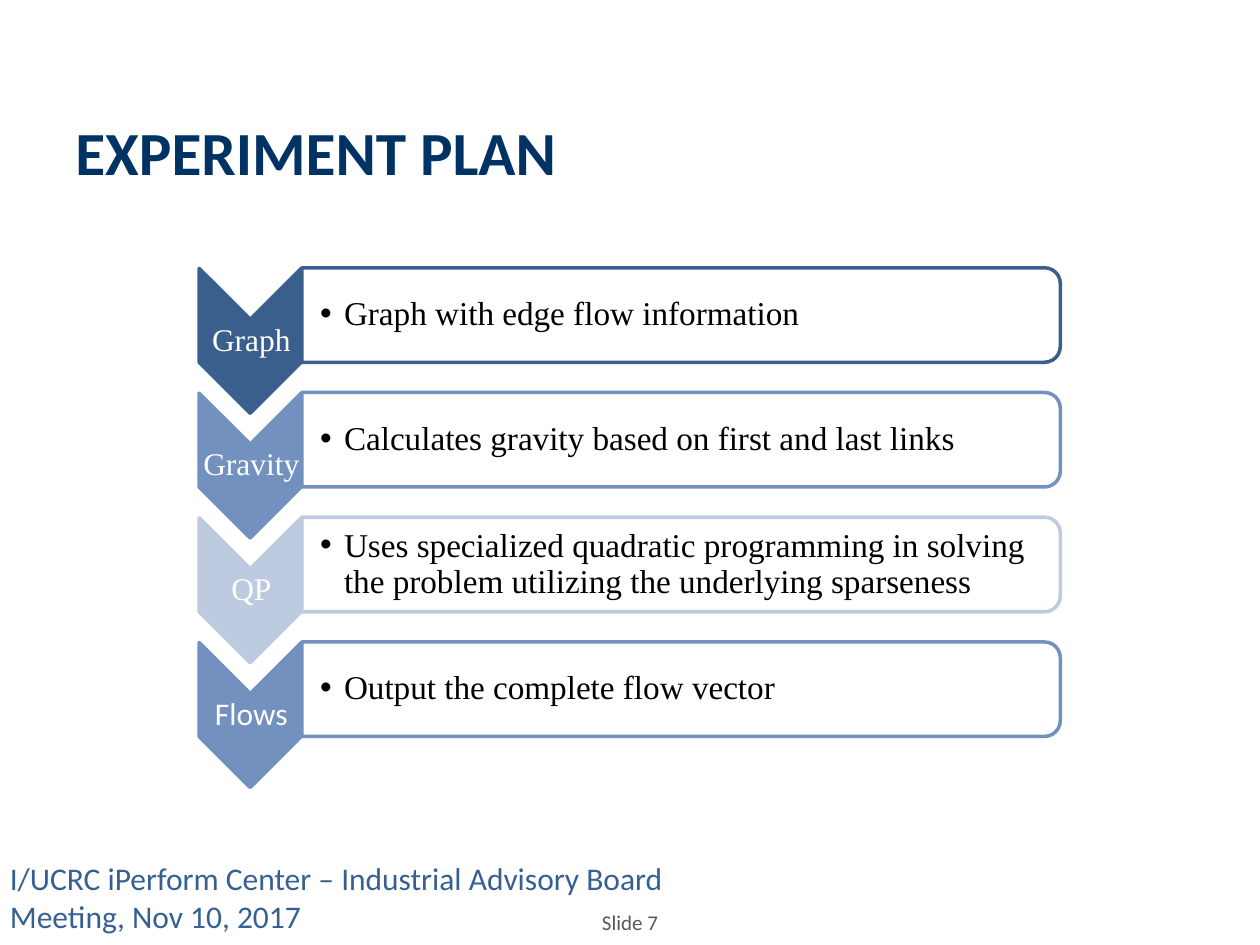
from dataclasses import dataclass

from lxml import etree
from pptx import Presentation
from pptx.dml.color import RGBColor
from pptx.enum.shapes import MSO_SHAPE
from pptx.enum.text import MSO_ANCHOR, MSO_AUTO_SIZE, PP_ALIGN
from pptx.oxml.ns import qn
from pptx.util import Inches, Pt

CHEVRON = MSO_SHAPE.CHEVRON
ROUNDED_TOP = MSO_SHAPE.ROUND_2_SAME_RECTANGLE
TOP, MIDDLE, BOTTOM = MSO_ANCHOR.TOP, MSO_ANCHOR.MIDDLE, MSO_ANCHOR.BOTTOM
LEFT, CENTER = PP_ALIGN.LEFT, PP_ALIGN.CENTER
GROW = MSO_AUTO_SIZE.SHAPE_TO_FIT_TEXT

NAVY = RGBColor(0x00, 0x32, 0x63)
FOOTER_BLUE = RGBColor(0x37, 0x60, 0x92)
DARK_BLUE = RGBColor(0x3A, 0x5F, 0x8C)
MID_BLUE = RGBColor(0x73, 0x91, 0xBF)
PALE_BLUE = RGBColor(0xBE, 0xCA, 0xDF)
GRAY = RGBColor(0x59, 0x59, 0x59)
WHITE = RGBColor(0xFF, 0xFF, 0xFF)
BLACK = RGBColor(0x00, 0x00, 0x00)

SANS, SERIF = "Calibri", "Times New Roman"
STEP_PITCH = 0.99


@dataclass(frozen=True)
class Area:
    left: float
    top: float
    width: float
    height: float

    def lengths(self):
        return [Inches(v) for v in (self.left, self.top, self.width, self.height)]

    def down(self, distance: float) -> "Area":
        return Area(self.left, self.top + distance, self.width, self.height)


@dataclass(frozen=True)
class Step:
    label: str
    detail: str
    color: RGBColor
    label_font: str = SERIF


STEPS = [
    Step("Graph", "Graph with edge flow information", DARK_BLUE),
    Step("Gravity", "Calculates gravity based on first and last links", MID_BLUE),
    Step("QP", "Uses specialized quadratic programming in solving "
         "the problem utilizing the underlying sparseness", PALE_BLUE),
    Step("Flows", "Output the complete flow vector", MID_BLUE, SANS),
]
CHEVRON_AREA = Area(1.41, 2.30, 1.15, 0.81)
LABEL_AREA = Area(1.59, 2.53, 0.81, 0.35)
PANEL_AREA = Area(5.03, -0.51, 0.75, 6.02)
DETAIL_AREA = Area(2.39, 2.16, 5.99, 0.68)


def add_text(page, area: Area, text: str, font: dict, anchor=TOP, align=LEFT,
             margins=(0.1, 0.05, 0.1, 0.05)):
    box = page.shapes.add_textbox(*area.lengths())
    frame = box.text_frame
    frame.word_wrap = True
    frame.vertical_anchor = anchor
    for side, margin in zip(("left", "top", "right", "bottom"), margins):
        setattr(frame, f"margin_{side}", Inches(margin))
    para = frame.paragraphs[0]
    para.alignment = align
    span = para.add_run()
    span.text = text
    span.font.color.rgb = font["color"]
    for name, value in font.items():
        if name != "color":
            setattr(span.font, name, value)
    return box


def add_turned_shape(page, kind, area: Area, fill: RGBColor, line: RGBColor):
    """Add a preset shape turned a quarter clockwise."""
    shape = page.shapes.add_shape(kind, *area.lengths())
    shape.rotation = 90
    shape.shadow.inherit = False
    shape.fill.solid()
    shape.fill.fore_color.rgb = fill
    shape.line.color.rgb = line
    shape.line.width = Pt(2)
    return shape


def set_opacity(shape, percent: int) -> None:
    color = shape.fill._xPr.find(qn("a:solidFill"))[0]
    etree.SubElement(color, qn("a:alpha"), val=str(percent * 1000))


def add_bullet(para) -> None:
    properties = para._p.get_or_add_pPr()
    indent = Inches(0.19)
    properties.set("marL", str(indent))
    properties.set("indent", str(-indent))
    etree.SubElement(properties, qn("a:buFont"), typeface="Arial")
    etree.SubElement(properties, qn("a:buChar"), char="•")


def add_step(page, step: Step, drop: float) -> None:
    add_turned_shape(page, CHEVRON, CHEVRON_AREA.down(drop), step.color, step.color)
    label = add_text(page, LABEL_AREA.down(drop), step.label,
                     {"name": step.label_font, "size": Pt(18), "color": WHITE},
                     MIDDLE, CENTER, (0.01,) * 4)
    panel = add_turned_shape(page, ROUNDED_TOP, PANEL_AREA.down(drop), WHITE, step.color)
    set_opacity(panel, 90)
    detail = add_text(page, DETAIL_AREA.down(drop), step.detail,
                      {"name": SERIF, "size": Pt(19), "color": BLACK},
                      MIDDLE, LEFT, (0.15, 0.01, 0.01, 0.01))
    add_bullet(detail.text_frame.paragraphs[0])
    for box in (label, detail):
        box.text_frame.paragraphs[0].line_spacing = 0.9


def main() -> None:
    deck = Presentation()
    deck.slide_width, deck.slide_height = Inches(10), Inches(7.5)
    page = deck.slides.add_slide(deck.slide_layouts[6])

    footer = add_text(page, Area(-0.02, 6.77, 5.51, 0.71),
                      "I/UCRC iPerform Center – Industrial Advisory Board Meeting, Nov 10, 2017",
                      {"name": SANS, "size": Pt(18), "color": FOOTER_BLUE})
    footer.text_frame.auto_size = GROW
    add_text(page, Area(0.5, 0.68, 9, 0.86), "EXPERIMENT PLAN",
             {"name": SANS, "size": Pt(35), "color": NAVY, "bold": True}, BOTTOM)
    for index, step in enumerate(STEPS):
        add_step(page, step, index * STEP_PITCH)
    add_text(page, Area(4.39, 7.12, 1.22, 0.4), "Slide 7",
             {"name": SANS, "size": Pt(12), "color": GRAY}, MIDDLE, CENTER)

    deck.save("out.pptx")


if __name__ == "__main__":
    main()
